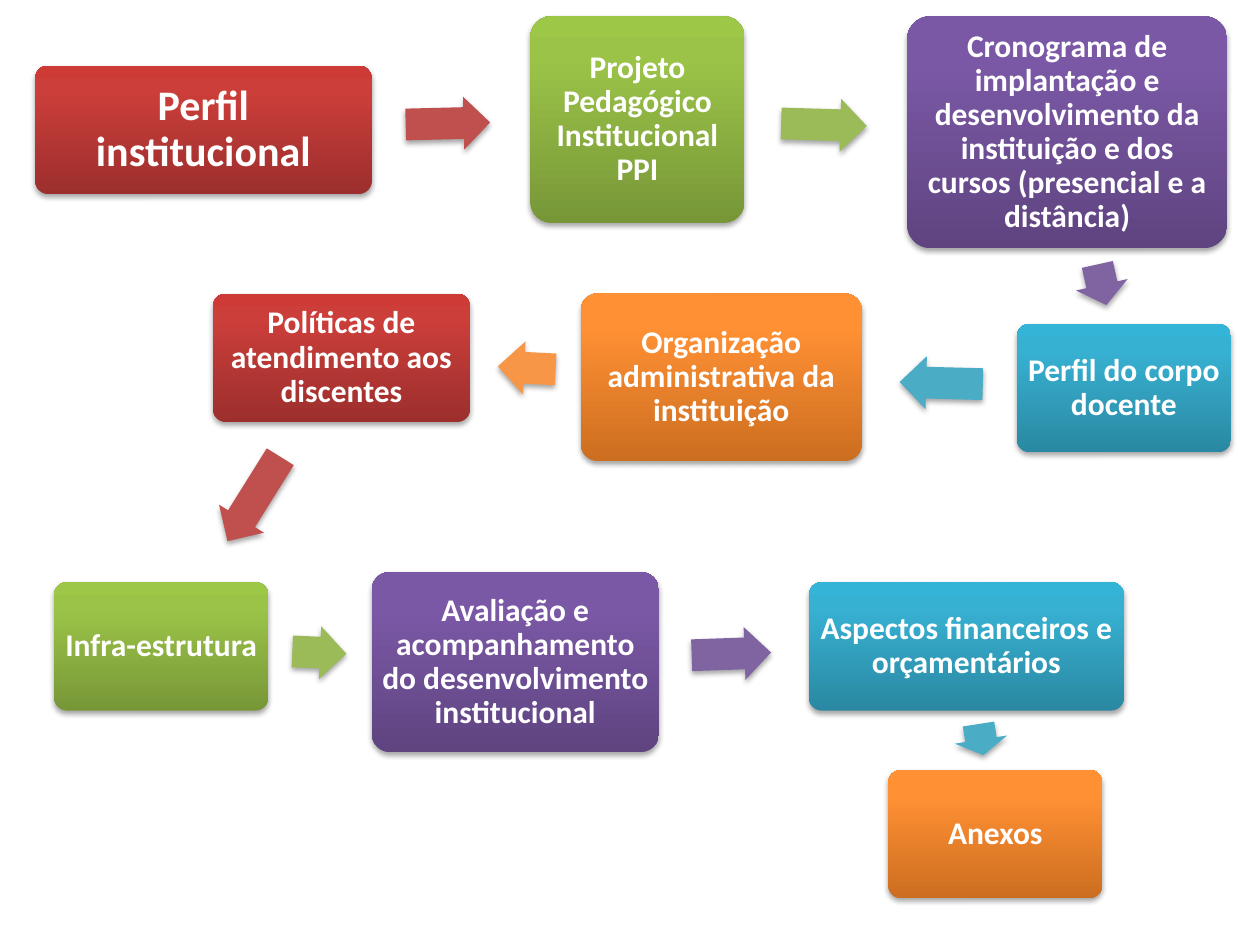
from lxml import etree
from pptx import Presentation
from pptx.dml.color import RGBColor
from pptx.enum.shapes import MSO_SHAPE as SHAPE
from pptx.enum.text import MSO_ANCHOR, PP_ALIGN
from pptx.oxml import parse_xml
from pptx.oxml.ns import nsdecls, qn
from pptx.util import Inches, Pt

FONT = "Calibri"
CORNER = 0.1
CORNER_INSET = 0.29 * CORNER  # share of the short side kept clear by round corners
ARROW_HEIGHT = 0.42
ROW_HEIGHT = 1.02
SMALL_WIDTH = 1.7

COLORS = {
    "white": "FFFFFF",
    "red": "C0504D",
    "green": "9BBB59",
    "purple": "8064A2",
    "teal": "4BACC6",
    "orange": "F79646",
}
# Box gradients, from bottom to top
GRADIENTS = {
    "red": ("9C2F2D", "CB3E3A", "CE3B37"),
    "green": ("779737", "9BC348", "9DC746"),
    "purple": ("5F4480", "7B58A6", "7C57A8"),
    "teal": ("2A88A2", "37B1D2", "34B4D6"),
    "orange": ("CC6E20", "FF9034", "FF9136"),
}
STOPS = (0, 80, 100)

# text, colour, left, top, width, height, font size, text margin
STEPS = [
    ("Perfil institucional", "red", 0.28, 0.52, 2.67, ROW_HEIGHT, 24, 0.1),
    ("Projeto Pedagógico Institucional PPI", "green", 4.21, 0.13, SMALL_WIDTH, 1.64, 18, 0.07),
    ("Cronograma de implantação e desenvolvimento da instituição e dos cursos "
     "(presencial e a distância)", "purple", 7.2, 0.13, 2.54, 1.84, 18, 0.07),
    ("Perfil do corpo docente", "teal", 8.07, 2.57, SMALL_WIDTH, ROW_HEIGHT, 18, 0.07),
    ("Organização administrativa da instituição", "orange", 4.61, 2.33, 2.23, 1.33, 18, 0.07),
    ("Políticas de atendimento aos discentes", "red", 1.69, 2.33, 2.04, ROW_HEIGHT, 18, 0.07),
    ("Infra-estrutura", "green", 0.43, 4.62, SMALL_WIDTH, ROW_HEIGHT, 18, 0.07),
    ("Avaliação e acompanhamento do desenvolvimento institucional", "purple",
     2.95, 4.54, 2.28, 1.43, 18, 0.07),
    ("Aspectos financeiros e orçamentários", "teal", 6.42, 4.62, 2.5, ROW_HEIGHT, 18, 0.07),
    ("Anexos", "orange", 7.05, 6.11, SMALL_WIDTH, ROW_HEIGHT, 18, 0.07),
]

# left, top, width, rotation of the arrow that leaves each step but the last
ARROWS = [
    (3.22, 0.77, 0.67, 358.6),
    (6.2, 0.78, 0.68, 1.7),
    (8.58, 2.05, 0.33, 77.5),
    (7.14, 2.83, 0.66, 181.5),
    (3.95, 2.71, 0.46, 182.9),
    (1.62, 3.75, 0.79, 122),
    (2.32, 4.97, 0.43, 2.5),
    (5.49, 4.98, 0.63, 358),
    (7.66, 5.66, 0.25, 81.2),
]


def set_gradient(sp, colors):
    sp.fill.gradient()
    sp.fill.gradient_angle = 90
    stops = sp._element.spPr.find(qn("a:gradFill")).find(qn("a:gsLst"))
    for gs in list(stops):
        stops.remove(gs)
    for pos, color in zip(STOPS, colors):
        gs = etree.SubElement(stops, qn("a:gs"), pos=str(pos * 1000))
        etree.SubElement(gs, qn("a:srgbClr"), val=color)


def set_shadow(sp):
    sp.shadow.inherit = False
    sp._element.spPr.find(qn("a:effectLst")).append(parse_xml(
        f'<a:outerShdw {nsdecls("a")} blurRad="{Pt(3.1)}" dist="{Pt(1.8)}" '
        'dir="5400000" rotWithShape="0"><a:srgbClr val="000000">'
        '<a:alpha val="35000"/></a:srgbClr></a:outerShdw>'))


def add_shape(slide, kind, box, adjustments):
    """Add an unlined shape with the soft shadow shared by boxes and arrows."""
    sp = slide.shapes.add_shape(kind, *map(Inches, box))
    for i, value in enumerate(adjustments):
        sp.adjustments[i] = value
    sp.line.fill.background()
    set_shadow(sp)
    return sp


def add_step(slide, text, color, left, top, width, height, size, margin):
    sp = add_shape(slide, SHAPE.ROUNDED_RECTANGLE, (left, top, width, height), [CORNER])
    set_gradient(sp, GRADIENTS[color])
    tf = sp.text_frame
    tf.word_wrap = True
    tf.vertical_anchor = MSO_ANCHOR.MIDDLE
    inset = Inches(max(0, margin - CORNER_INSET * min(width, height)))
    for side in ("left", "top", "right", "bottom"):
        setattr(tf, f"margin_{side}", inset)
    p = tf.paragraphs[0]
    p.alignment = PP_ALIGN.CENTER
    p.line_spacing = 0.9
    r = p.add_run()
    r.text = text
    for name, value in {"name": FONT, "size": Pt(size), "bold": True}.items():
        setattr(r.font, name, value)
    r.font.color.rgb = RGBColor.from_string(COLORS["white"])


def add_arrow(slide, color, left, top, width, rotation):
    sp = add_shape(slide, SHAPE.RIGHT_ARROW, (left, top, width, ARROW_HEIGHT), [0.6, 0.5])
    sp.rotation = rotation
    sp.fill.solid()
    sp.fill.fore_color.rgb = RGBColor.from_string(COLORS[color])


def main():
    prs = Presentation()
    prs.slide_width, prs.slide_height = Inches(10), Inches(7.5)
    slide = prs.slides.add_slide(prs.slide_layouts[6])
    for i, step in enumerate(STEPS):
        add_step(slide, *step)
        if i < len(ARROWS):
            add_arrow(slide, step[1], *ARROWS[i])
    prs.save("out.pptx")


if __name__ == "__main__":
    main()
